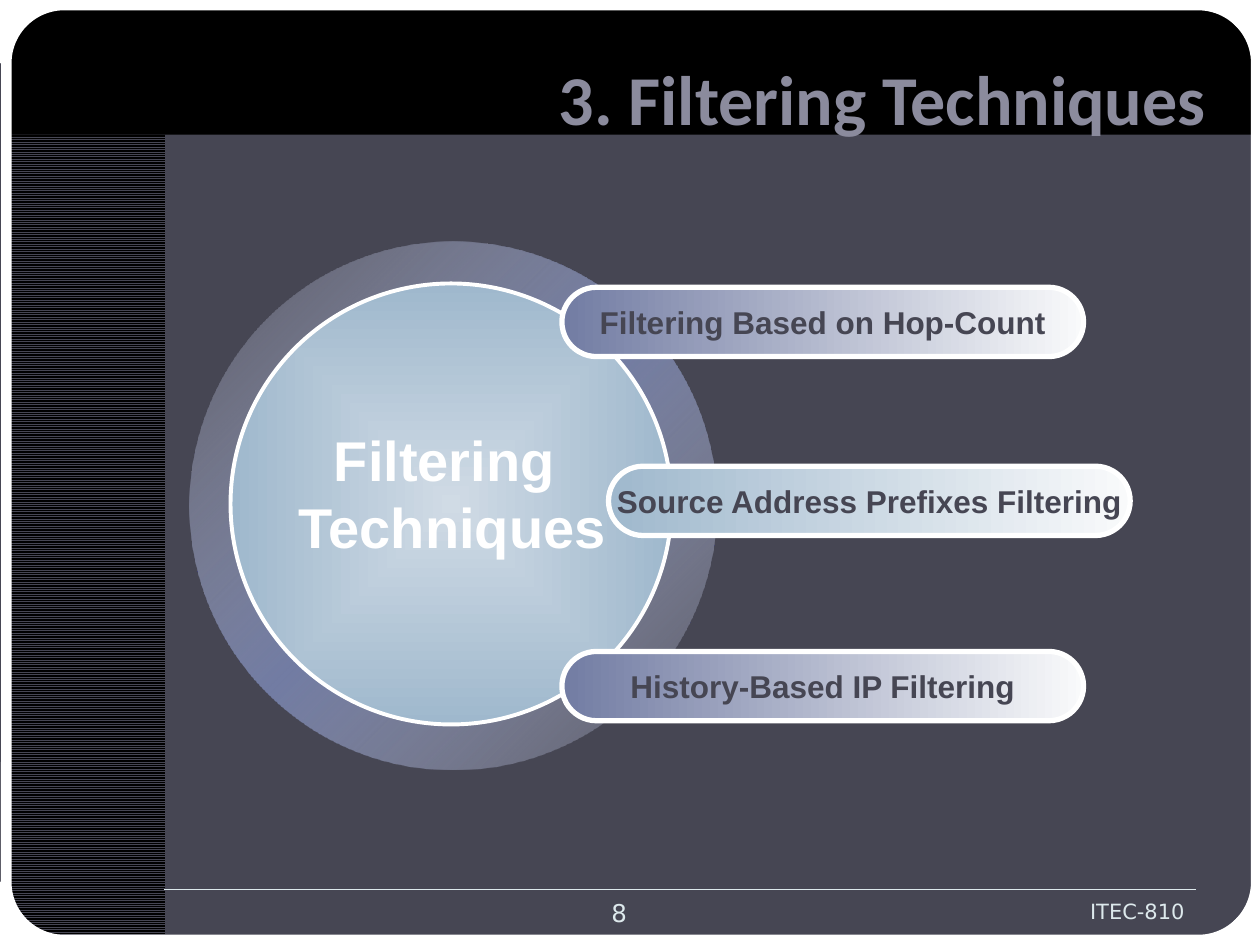
from typing import NamedTuple, Optional

from lxml.etree import SubElement
from pptx import Presentation
from pptx.dml.color import RGBColor
from pptx.enum.dml import MSO_PATTERN
from pptx.enum.shapes import MSO_CONNECTOR, MSO_SHAPE
from pptx.enum.text import MSO_ANCHOR, MSO_AUTO_SIZE, PP_ALIGN
from pptx.oxml.ns import qn
from pptx.util import Inches, Pt

BLACK = RGBColor(0x00, 0x00, 0x00)
WHITE = RGBColor(0xFF, 0xFF, 0xFF)
SLATE = RGBColor(0x46, 0x46, 0x53)
TITLE_GREY = RGBColor(0x8B, 0x8B, 0x9D)
PALE = RGBColor(0xDD, 0xE9, 0xEC)
INDIGO = RGBColor(0x72, 0x7C, 0xA3)
INDIGO_TINT = RGBColor(0xBB, 0xBE, 0xCE)
STEEL = RGBColor(0x9F, 0xB8, 0xCD)
STEEL_TINT = RGBColor(0xD0, 0xDB, 0xE5)
NEAR_WHITE = RGBColor(0xF9, 0xFA, 0xFB)

# The slide is a grid of 100 columns by 75 square rows.
SLIDE_WIDTH, SLIDE_HEIGHT = Inches(10), Inches(7.5)
COLUMNS, ROWS = 100, 75
CELL = SLIDE_WIDTH // COLUMNS


class Box(NamedTuple):
    left: float
    top: float
    width: float
    height: float

    def lengths(self) -> list[int]:
        return [round(value * CELL) for value in self]


class TextStyle(NamedTuple):
    font: str
    size: float
    color: RGBColor
    bold: bool = False
    align: PP_ALIGN = PP_ALIGN.CENTER
    shadow: bool = False


class Stop(NamedTuple):
    position: int
    color: RGBColor
    alpha: int = 100


class Pill(NamedTuple):
    text: str
    left: float
    top: float
    color: RGBColor


class Caption(NamedTuple):
    lines: list[str]
    box: Box
    style: TextStyle
    wrap: bool = True


TITLE_STYLE = TextStyle("Calibri", 40, TITLE_GREY, True, PP_ALIGN.RIGHT)
PILL_STYLE = TextStyle("Arial", 18, SLATE, True)
PILLS = [
    Pill("Filtering Based on Hop-Count", 44.6, 22.8, INDIGO),
    Pill("Source Address Prefixes Filtering", 48.3, 37, STEEL),
    Pill("History-Based IP Filtering", 44.6, 51.7, INDIGO),
]
CAPTIONS = [
    Caption(["Filtering ", "Techniques"], Box(22.6, 33.3, 26.6, 11.8),
            TextStyle("Arial", 32, WHITE, True, shadow=True), False),
    Caption(["ITEC-810"], Box(72.5, 70.8, 22.5, 3.3),
            TextStyle("DejaVu Sans", 12, PALE, align=PP_ALIGN.RIGHT)),
    Caption(["8"], Box(37.5, 70.8, 23.3, 3.4), TextStyle("DejaVu Sans", 14, PALE)),
]
CORNER = [(0, 0), (0, 5), (1.4, 2.5), (2.5, 1.4), (5, 0)]


def add_shape(slide, kind: MSO_SHAPE, box: Box, fill: Optional[RGBColor] = None,
              line_width: float = 0, adjustment: Optional[float] = None):
    shape = slide.shapes.add_shape(kind, *box.lengths())
    shape.shadow.inherit = False
    if adjustment is not None:
        shape.adjustments[0] = adjustment
    if fill is None:
        shape.fill.background()
    else:
        shape.fill.solid()
        shape.fill.fore_color.rgb = fill
    if line_width:
        shape.line.color.rgb = WHITE
        shape.line.width = Pt(line_width)
    else:
        shape.line.fill.background()
    return shape


def set_gradient(shape, stops: list[Stop], angle: Optional[int] = None) -> None:
    """Fill with a linear gradient, or one from the centre when angle is None."""
    shape.fill.gradient()
    gradient = shape._element.spPr.find(qn("a:gradFill"))
    for child in list(gradient):
        gradient.remove(child)
    stop_list = SubElement(gradient, qn("a:gsLst"))
    for stop in stops:
        item = SubElement(stop_list, qn("a:gs"), pos=str(stop.position * 1000))
        color = SubElement(item, qn("a:srgbClr"), val=str(stop.color))
        if stop.alpha < 100:
            SubElement(color, qn("a:alpha"), val=str(stop.alpha * 1000))
    if angle is None:
        centre = SubElement(gradient, qn("a:path"), path="shape")
        SubElement(centre, qn("a:fillToRect"),
                   {side: "50000" for side in ("l", "t", "r", "b")})
    else:
        SubElement(gradient, qn("a:lin"), ang=str(angle * 60000), scaled="1")


def write_text(frame, lines: list[str], style: TextStyle) -> None:
    for index, line in enumerate(lines):
        paragraph = frame.add_paragraph() if index else frame.paragraphs[0]
        paragraph.alignment = style.align
        run = paragraph.add_run()
        run.text = line
        run.font.name = style.font
        run.font.size = Pt(style.size)
        run.font.bold = style.bold
        run.font.color.rgb = style.color
        if style.shadow:
            effects = run.font.fill._xPr.find(qn("a:solidFill"))
            effect_list = effects.makeelement(qn("a:effectLst"))
            effects.addnext(effect_list)
            shadow = SubElement(effect_list, qn("a:outerShdw"),
                                dist="35921", dir="2700000")
            SubElement(shadow, qn("a:srgbClr"), val=str(BLACK))


def add_corner(slide, right: bool, bottom: bool) -> None:
    points = [((COLUMNS - x if right else x) * CELL, (ROWS - y if bottom else y) * CELL)
              for x, y in CORNER]
    builder = slide.shapes.build_freeform(*points[0])
    builder.add_line_segments(points[1:], close=True)
    corner = builder.convert_to_shape()
    corner.shadow.inherit = False
    corner.fill.solid()
    corner.fill.fore_color.rgb = WHITE
    corner.line.color.rgb = WHITE
    corner.line.width = Pt(0.75)


def add_frame(slide) -> None:
    add_shape(slide, MSO_SHAPE.RECTANGLE, Box(0.5, 0.6, 99.4, 10.1), BLACK)
    stripes = add_shape(slide, MSO_SHAPE.RECTANGLE, Box(0.1, 10.7, 13, 64.3))
    stripes.fill.patterned()
    stripes.fill.pattern = MSO_PATTERN.NARROW_HORIZONTAL
    stripes.fill.fore_color.rgb = SLATE
    stripes.fill.back_color.rgb = BLACK
    add_shape(slide, MSO_SHAPE.ROUNDED_RECTANGLE, Box(0.5, 0.4, 99.2, 74.2),
              line_width=6, adjustment=0.062)
    for right in (False, True):
        for bottom in (False, True):
            add_corner(slide, right, bottom)
    rule = slide.shapes.add_connector(
        MSO_CONNECTOR.STRAIGHT, *Box(13, 70.6, 94.9, 70.6).lengths())
    rule.line.color.rgb = PALE
    rule.line.width = Pt(0.75)
    SubElement(rule._element.spPr, qn("a:effectLst"))


def place_title(slide) -> None:
    title = slide.shapes.title
    title.left, title.top, title.width, title.height = Box(15, 3.8, 81.7, 7.8).lengths()
    title.text_frame.auto_size = MSO_AUTO_SIZE.NONE
    title.text_frame.vertical_anchor = MSO_ANCHOR.MIDDLE
    write_text(title.text_frame, ["3. Filtering Techniques"], TITLE_STYLE)
    slide.shapes._spTree.append(title._element)  # in front of the frame


def add_pill(slide, pill: Pill) -> None:
    shape = add_shape(slide, MSO_SHAPE.ROUNDED_RECTANGLE,
                      Box(pill.left, pill.top, 41.4, 5.5), line_width=3, adjustment=0.5)
    set_gradient(shape, [Stop(0, pill.color), Stop(100, NEAR_WHITE)], 0)
    shape.text_frame.word_wrap = False
    shape.text_frame.vertical_anchor = MSO_ANCHOR.MIDDLE
    write_text(shape.text_frame, [pill.text], PILL_STYLE)


def add_caption(slide, caption: Caption) -> None:
    frame = slide.shapes.add_textbox(*caption.box.lengths()).text_frame
    frame.word_wrap = caption.wrap
    write_text(frame, caption.lines, caption.style)


def main() -> None:
    presentation = Presentation()
    presentation.slide_width, presentation.slide_height = SLIDE_WIDTH, SLIDE_HEIGHT
    slide = presentation.slides.add_slide(presentation.slide_layouts[5])
    slide.background.fill.solid()
    slide.background.fill.fore_color.rgb = SLATE
    add_frame(slide)
    place_title(slide)
    ring = add_shape(slide, MSO_SHAPE.DONUT, Box(15, 19.2, 41.9, 41.9), adjustment=0.09)
    set_gradient(ring, [Stop(0, INDIGO_TINT, 12), Stop(50, INDIGO),
                        Stop(100, INDIGO_TINT, 12)], 45)
    disc = add_shape(slide, MSO_SHAPE.OVAL, Box(18.3, 22.5, 35, 35), line_width=2.25)
    set_gradient(disc, [Stop(0, STEEL_TINT), Stop(100, STEEL)])
    for pill in PILLS:
        add_pill(slide, pill)
    for caption in CAPTIONS:
        add_caption(slide, caption)
    presentation.save("out.pptx")


if __name__ == "__main__":
    main()
